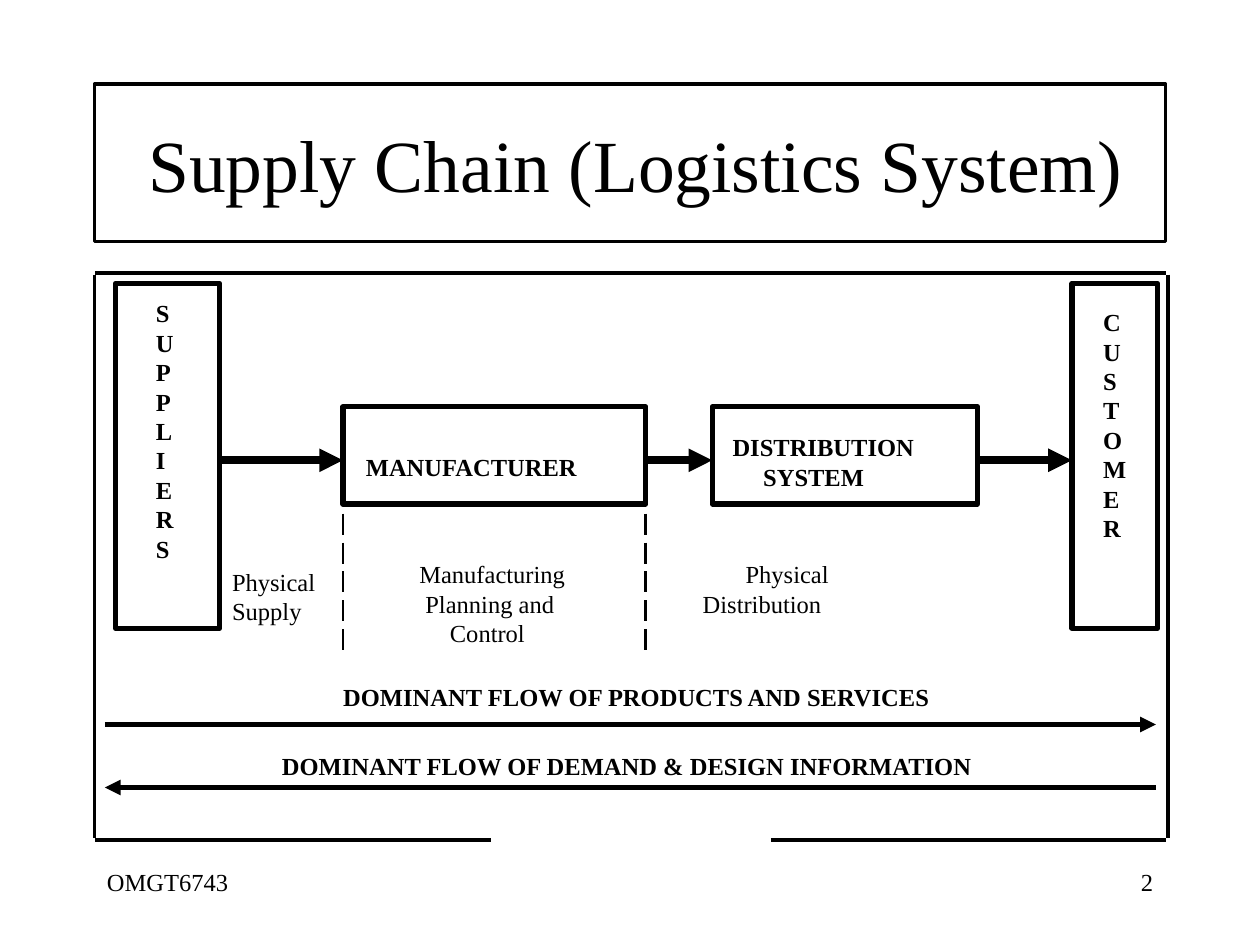
"""Build the supply chain (logistics system) slide."""
import pptx
import pptx.dml.color
import pptx.enum.dml
import pptx.enum.shapes
import pptx.enum.text
import pptx.oxml.ns
import pptx.util
from lxml import etree

Pt = pptx.util.Pt
ALIGN = pptx.enum.text.PP_ALIGN
ANCHOR = pptx.enum.text.MSO_ANCHOR
BLACK = pptx.dml.color.RGBColor(0, 0, 0)
WHITE = pptx.dml.color.RGBColor(255, 255, 255)
FONT = "Times New Roman"

deck = pptx.Presentation()
deck.slide_width, deck.slide_height = Pt(720), Pt(540)
slide = deck.slides.add_slide(deck.slide_layouts[6])


def add_text(text, left, top, width, height, size=14, bold=False, align=ALIGN.LEFT,
             anchor=ANCHOR.TOP, wrap=True, right_margin=7.2, indents=(), fill=None):
    box = slide.shapes.add_textbox(Pt(left), Pt(top), Pt(width), Pt(height))
    if fill is not None:
        box.fill.solid()
        box.fill.fore_color.rgb = fill
    frame = box.text_frame
    frame.word_wrap = wrap
    frame.vertical_anchor = anchor
    frame.margin_right = Pt(right_margin)
    frame.text = text
    for paragraph in frame.paragraphs:
        paragraph.alignment = align
        paragraph.font.name = FONT
        paragraph.font.size = Pt(size)
        paragraph.font.bold = bold
        paragraph.font.color.rgb = BLACK
    for paragraph, indent in zip(frame.paragraphs, indents):
        paragraph._p.get_or_add_pPr().set("marL", str(Pt(indent)))


def add_line(x1, y1, x2, y2, weight, arrow=False, dash=None):
    line = slide.shapes.add_connector(
        pptx.enum.shapes.MSO_CONNECTOR.STRAIGHT, Pt(x1), Pt(y1), Pt(x2), Pt(y2))
    line.line.color.rgb = BLACK
    line.line.width = Pt(weight)
    if dash is not None:
        line.line.dash_style = dash
    properties = line._element.spPr
    if arrow:
        outline = properties.find(pptx.oxml.ns.qn("a:ln"))
        etree.SubElement(outline, pptx.oxml.ns.qn("a:tailEnd"), type="triangle")
    etree.SubElement(properties, pptx.oxml.ns.qn("a:effectLst"))


add_text("OMGT6743", 54, 492, 150, 36)
add_text("2", 516, 492, 150, 36, align=ALIGN.RIGHT)

for border in [(54.5, 156, 666.5, 156), (54, 157, 54, 479), (667.5, 157, 667.5, 479),
               (54.5, 480, 280.5, 480), (440.5, 480, 666.5, 480)]:
    add_line(*border, weight=2)

add_text("Supply Chain (Logistics System)", 66, 60, 594, 66, size=42,
         align=ALIGN.CENTER, anchor=ANCHOR.MIDDLE, fill=WHITE)

title_frame = (54, 48, 612, 90)
suppliers = (66, 162, 59.5, 197)
manufacturer = (196, 232.5, 173, 55.5)
distribution = (407, 232.5, 151.5, 55.5)
customer = (612.5, 162, 49, 197)
stages = [suppliers, manufacturer, distribution, customer]
for bounds, weight in [(title_frame, 2)] + [(stage, 3) for stage in stages]:
    outline_box = slide.shapes.add_shape(
        pptx.enum.shapes.MSO_SHAPE.RECTANGLE, *map(Pt, bounds))
    outline_box.shadow.inherit = False
    outline_box.fill.background()
    outline_box.line.color.rgb = BLACK
    outline_box.line.width = Pt(weight)

for source, target in zip(stages, stages[1:]):
    add_line(source[0] + source[2], 263, target[0], 263, weight=4.5, arrow=True)
add_line(60, 414, 660.5, 414, weight=3, arrow=True)
add_line(660.5, 450, 60, 450, weight=3, arrow=True)
for boundary in (manufacturer[0], manufacturer[0] + manufacturer[2]):
    add_line(boundary, 293.5, boundary, 374.5, weight=1.5,
             dash=pptx.enum.dml.MSO_LINE.LONG_DASH)

add_text("SUPPLIERS", 82, 167, 17.5, 158, bold=True)
add_text("CUSTOMER", 623.25, 172, 34, 141, bold=True, right_margin=23.7)
add_text("MANUFACTURER", 202, 255, 150, 24, bold=True)
add_text("DISTRIBUTION\nSYSTEM", 411.5, 243.5, 140, 41, bold=True, indents=(0, 17.5))
add_text("Physical\nSupply", 125.5, 320.5, 68, 41)
add_text("Manufacturing\nPlanning and\nControl", 232.5, 316, 110, 58, indents=(0, 3.5, 17.5))
add_text("Physical\nDistribution", 394.5, 316, 158, 41, indents=(24.5, 0))
add_text("DOMINANT FLOW OF PRODUCTS AND SERVICES", 189, 386, 351, 24, bold=True, wrap=False)
add_text("DOMINANT FLOW OF DEMAND & DESIGN INFORMATION", 154, 425.5, 410, 24,
         bold=True, wrap=False)

deck.save("out.pptx")
